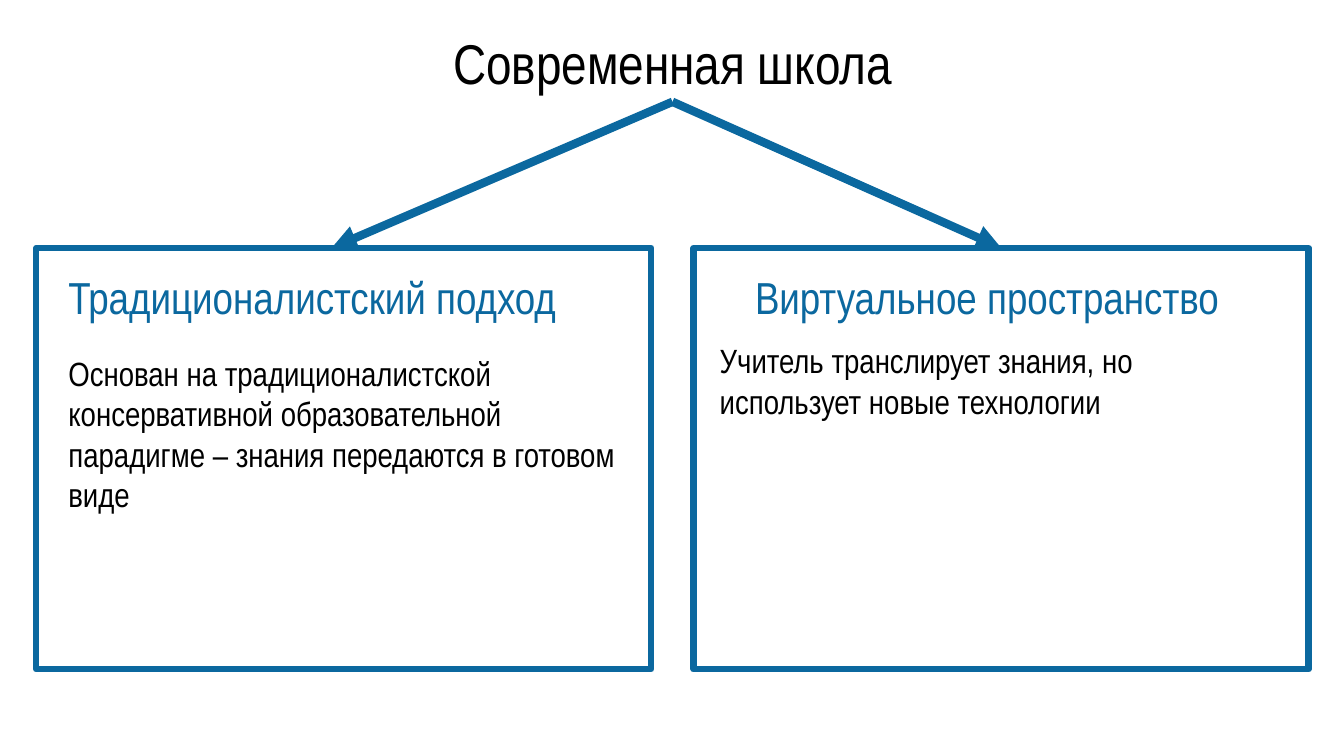
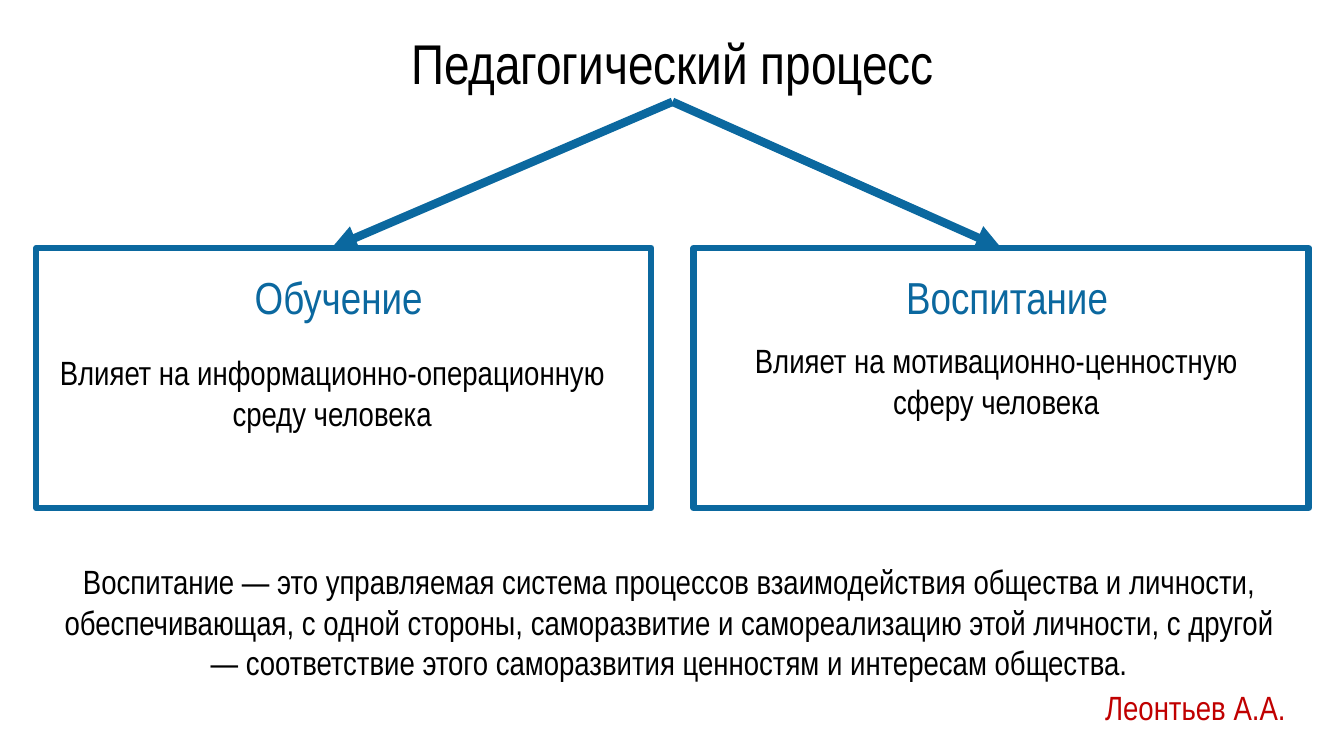
from dataclasses import dataclass

from lxml import etree
from pptx import Presentation
from pptx.dml.color import RGBColor
from pptx.enum import shapes, text
from pptx.oxml.ns import qn
from pptx.util import Emu, Pt

PX = 9144  # EMU per px, 100 px to the inch
LEFT, CENTER, RIGHT = text.PP_ALIGN.LEFT, text.PP_ALIGN.CENTER, text.PP_ALIGN.RIGHT
TOP, MIDDLE = text.MSO_ANCHOR.TOP, text.MSO_ANCHOR.MIDDLE


@dataclass(frozen=True)
class Theme:
    font: str = "Arial Narrow"
    ink: str = "000000"
    accent: str = "0B689F"
    author: str = "C00000"
    paper: str = "FFFFFF"
    title: int = 40
    heading: int = 32
    body: int = 24
    border: float = 4.5
    arrow: int = 6


T = Theme()
SLIDE_SIZE = (1333, 750)
TITLE_BOX = (42, 23, 1250, 78)
PANEL_LEFT, PANEL_TOP, PANEL_WIDTH, PANEL_GAP = 36, 246, 610, 42
LEFT_ARROW_TIP = (329, PANEL_TOP)
QUOTE_BOX = (42, 551, 1243, 176)

# Each panel: heading, heading box, body, body box
SLIDES = [
    {
        "title": "Современная школа",
        "panel_height": 418,
        "align": LEFT,
        "panels": [
            ("Традиционалистский подход", (58, 263, 543, 64),
             "Основан на традиционалистской консервативной образовательной "
             "парадигме – знания передаются в готовом виде", (58, 344, 573, 172)),
            ("Виртуальное пространство", (739, 263, 503, 64),
             "Учитель транслирует знания, но использует новые технологии",
             (704, 332, 537, 91)),
        ],
    },
    {
        "title": "Педагогический процесс",
        "panel_height": 258,
        "align": CENTER,
        "panels": [
            ("Обучение", (58, 263, 556, 64),
             "Влияет на информационно-операционную среду человека",
             (43, 344, 573, 91)),
            ("Воспитание", (739, 263, 520, 64),
             "Влияет на мотивационно-ценностную сферу человека",
             (704, 332, 568, 91)),
        ],
        "quote": (
            "Воспитание — это управляемая система процессов взаимодействия "
            "общества и личности, обеспечивающая, с одной стороны, саморазвитие "
            "и самореализацию этой личности, с другой — соответствие этого "
            "саморазвития ценностям и интересам общества.",
            "Леонтьев А.А.",
        ),
    },
]


def emu(lengths):
    return [Emu(n * PX) for n in lengths]


def rgb(color):
    return RGBColor.from_string(color)


def add_text(slide, box, lines, size, anchor=TOP, before=0):
    """Add a text box; lines holds (wording, alignment, colour) per paragraph."""
    sp = slide.shapes.add_textbox(*emu(box))
    tf = sp.text_frame
    tf.word_wrap, tf.vertical_anchor = True, anchor
    for i, (wording, align, color) in enumerate(lines):
        p = tf.add_paragraph() if i else tf.paragraphs[0]
        p.alignment, p.space_before = align, Pt(before)
        r = p.add_run()
        r.text = wording
        for name, value in {"name": T.font, "size": Pt(size)}.items():
            setattr(r.font, name, value)
        r.font.color.rgb = rgb(color)
    return sp


def add_panel(slide, column, height):
    left = PANEL_LEFT + column * (PANEL_WIDTH + PANEL_GAP)
    sp = slide.shapes.add_shape(shapes.MSO_SHAPE.RECTANGLE,
                                *emu((left, PANEL_TOP, PANEL_WIDTH, height)))
    sp.shadow.inherit = False
    sp.fill.solid()
    sp.fill.fore_color.rgb = rgb(T.paper)
    sp.line.color.rgb = rgb(T.accent)
    sp.line.width = Pt(T.border)
    return sp


def add_arrow(slide, title, tip=(0, 0), panel=None):
    """Draw an arrow from under the title to a point or to a panel's top."""
    line = slide.shapes.add_connector(shapes.MSO_CONNECTOR.STRAIGHT, 0, 0, *emu(tip))
    line.begin_connect(title, 2)
    if panel is not None:
        line.end_connect(panel, 0)
    line.line.color.rgb = rgb(T.accent)
    line.line.width = Pt(T.arrow)
    etree.SubElement(line.line._get_or_add_ln(), qn("a:tailEnd"), type="triangle")
    etree.SubElement(line._element.spPr, qn("a:effectLst"))


def build_slide(prs, content):
    slide = prs.slides.add_slide(prs.slide_layouts[6])
    panels = [add_panel(slide, column, content["panel_height"])
              for column in range(len(content["panels"]))]
    title = add_text(slide, TITLE_BOX, [(content["title"], CENTER, T.ink)], T.title)
    align = content["align"]
    for heading, heading_box, body, body_box in content["panels"]:
        add_text(slide, heading_box, [(heading, align, T.accent)], T.heading)
        add_text(slide, body_box, [(body, align, T.ink)], T.body, MIDDLE, 3)
    add_arrow(slide, title, tip=LEFT_ARROW_TIP)
    add_arrow(slide, title, panel=panels[1])
    if "quote" in content:
        quote, author = content["quote"]
        add_text(slide, QUOTE_BOX,
                 [(quote, CENTER, T.ink), (author, RIGHT, T.author)],
                 T.body, MIDDLE, 3)


def main():
    prs = Presentation()
    prs.slide_width, prs.slide_height = emu(SLIDE_SIZE)
    for content in SLIDES:
        build_slide(prs, content)
    prs.save("out.pptx")


if __name__ == "__main__":
    main()
